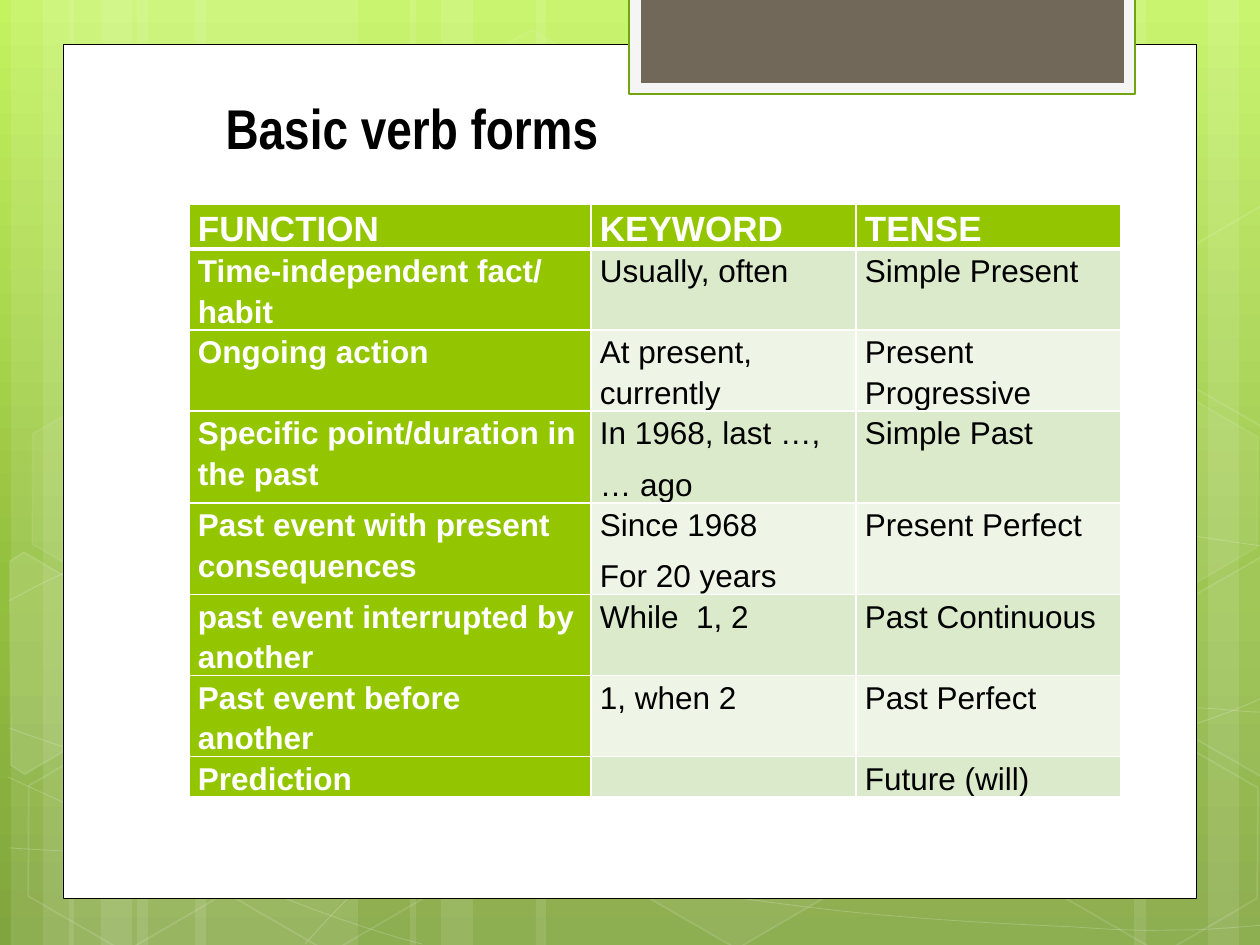
from math import cos, radians, sin

from pptx import Presentation
from pptx.dml.color import RGBColor
from pptx.enum.shapes import MSO_SHAPE as Shape
from pptx.enum.text import MSO_ANCHOR as Anchor, MSO_AUTO_SIZE as AutoSize, PP_ALIGN as Align
from pptx.oxml import parse_xml
from pptx.oxml.ns import nsdecls, qn
from pptx.util import Pt

# ---- Content ----
TITLE = "Basic verb forms"
VERB_FORMS = [
    ("FUNCTION", "KEYWORD", "TENSE"),
    ("Time-independent fact/ habit", "Usually, often", "Simple Present"),
    ("Ongoing action", "At present, currently", "Present Progressive"),
    ("Specific point/duration in the past", "In 1968, last …,\n… ago", "Simple Past"),
    ("Past event with present consequences", "Since 1968\nFor 20 years", "Present Perfect"),
    ("past event interrupted by another", "While  1, 2", "Past Continuous"),
    ("Past event before another", "1, when 2", "Past Perfect"),
    ("Prediction", "", "Future (will)"),
]
COLUMN_WIDTHS = (402, 265, 265)
TABLE_HEIGHT = 635

# ---- Design, lengths in px ----
PX = 914400 / 126
WIDTH, HEIGHT = 1260, 945
WHITE, BLACK, GREEN = "FFFFFF", "000000", "94C600"
BANDS = ("DCEACC", "EEF5E7")
SKY = [(0, "C3F35F"), (62, "93BF3F"), (100, "81A53E")]

# left, width, rotation
STRIPES = [
    (137, 221, 0), (11, 63, 0), (43, 105, 0), (195, 221, 0), (69, 63, 0), (101, 105, 0),
    (925, 221, 180), (1208, 63, 180), (1134, 105, 180),
    (536, 389, 0), (410, 63, 0), (441, 105, 0),
]
# start point, then Bézier segments of two controls and an end
WAVES = [
    [(9, 848), (77, 852), (145, 856), (239, 854), (334, 853), (451, 851), (577, 838),
     (703, 825), (882, 801), (998, 777), (1113, 753), (1231, 716), (1269, 694)],
    [(9, 601), (45, 581), (82, 562), (152, 543), (224, 524), (326, 496), (437, 488),
     (549, 479), (685, 478), (824, 488), (963, 498), (1193, 537), (1269, 547)],
    [(8, 777), (160, 847), (311, 916), (422, 944)],
    [(9, 728), (48, 742), (88, 756), (161, 776), (234, 795), (344, 827), (450, 848),
     (554, 869), (687, 892), (791, 905), (896, 919), (1008, 924), (1075, 927),
     (1142, 932), (1158, 930), (1191, 930), (1223, 929), (1246, 926), (1269, 925)],
    [(305, 944), (328, 919), (350, 893), (381, 871), (411, 847), (454, 823), (489, 805),
     (524, 788), (546, 780), (591, 767), (638, 755), (722, 737), (766, 728),
     (811, 719), (818, 719), (857, 717), (896, 713), (958, 709), (1000, 708),
     (1045, 707), (1116, 708), (1116, 708), (1116, 708), (1201, 708), (1201, 708),
     (1223, 709), (1245, 712), (1256, 712), (1267, 713), (1264, 712), (1268, 713)],
]
# left, top, fill opacity, line opacity
HEXAGONS = [
    (421, 45, 4, 8), (626, 742, 6, 12), (14, 745, 0, 12), (18, 393, 7, 8), (219, 746, 0, 12),
    (949, 571, 10, 12), (1051, 747, 0, 12), (1051, 396, 7, 8),
]
# centre, corners as they stand on the slide, fill opacity
CUT_HEXAGONS = [
    ((45, 675), [(10, 561), (24, 552), (121, 609), (120, 718), (25, 774), (11, 765)], 10),
    ((1241, 655), [(1167, 611), (1263, 556), (1271, 562), (1271, 772), (1263, 777), (1167, 722)], 4),
    ((1241, 304), [(1167, 261), (1263, 205), (1273, 212), (1271, 422), (1263, 427), (1167, 372)], 0),
]
TILT = 30
# left, top, width, height, fill, line, line width
PANELS = [
    (63, 45, 1134, 854, WHITE, BLACK, 0.5),
    (629, -3, 506, 97, "F5F5F5", "74A510", 1.25),
    (641, -2, 483, 85, "71685A", None, 0),
]


def emu(*lengths):
    return [round(length * PX) for length in lengths]


def color(hex_string):
    return RGBColor.from_string(hex_string)


def fade(parent, opacity):
    rgb = parent.find(qn("a:solidFill"))[0]
    rgb.append(parse_xml(f'<a:alpha {nsdecls("a")} val="{opacity * 1000}"/>'))


def paint(shape, fill=None, fill_opacity=100, line=None, line_width=0, line_opacity=100):
    shape.shadow.inherit = False
    properties = shape.element.spPr
    if fill and fill_opacity:
        shape.fill.solid()
        shape.fill.fore_color.rgb = color(fill)
        if fill_opacity < 100:
            fade(properties, fill_opacity)
    else:
        shape.fill.background()
    if line:
        shape.line.color.rgb = color(line)
        shape.line.width = Pt(line_width)
        if line_opacity < 100:
            fade(properties.find(qn("a:ln")), line_opacity)
    else:
        shape.line.fill.background()


def outline(shapes, points, close):
    corners = [emu(*point) for point in points]
    builder = shapes.build_freeform(*corners[0], scale=1.0)
    builder.add_line_segments(corners[1:], close=close)
    return builder.convert_to_shape()


def bend(wave):
    """Turn every three straight segments into one Bézier segment."""
    track = wave.element.find(".//" + qn("a:path"))
    straights = track.findall(qn("a:lnTo"))
    for first in range(0, len(straights), 3):
        curve = parse_xml(f'<a:cubicBezTo {nsdecls("a")}/>')
        for straight in straights[first:first + 3]:
            curve.append(straight[0])
            track.remove(straight)
        track.append(curve)


def untilt(point, centre):
    dx, dy = point[0] - centre[0], point[1] - centre[1]
    c, s = cos(radians(TILT)), sin(radians(TILT))
    return centre[0] + dx * c + dy * s, centre[1] - dx * s + dy * c


def add_backdrop(slide):
    background = slide.background.fill
    background.gradient()
    background.gradient_angle = 270
    stops = slide.element.find(".//" + qn("a:gsLst"))
    stops[:] = [
        parse_xml(f'<a:gs {nsdecls("a")} pos="{at * 1000}"><a:srgbClr val="{rgb}"/></a:gs>')
        for at, rgb in SKY
    ]
    pattern = slide.shapes.add_group_shape().shapes
    for left, width, rotation in STRIPES:
        stripe = pattern.add_shape(Shape.RECTANGLE, *emu(left, 0, width, HEIGHT))
        stripe.rotation = rotation
        paint(stripe, WHITE, 10)
    for points in WAVES:
        wave = outline(pattern, points, False)
        bend(wave)
        paint(wave, line=WHITE, line_width=0.5, line_opacity=20)
    for left, top, fill_opacity, line_opacity in HEXAGONS:
        hexagon = pattern.add_shape(Shape.HEXAGON, *emu(left, top, 221, 192))
        hexagon.adjustments[0] = 0.285
        hexagon.rotation = TILT
        paint(hexagon, WHITE, fill_opacity, WHITE, 1, line_opacity)
    for centre, corners, fill_opacity in CUT_HEXAGONS:
        cut = outline(pattern, [untilt(corner, centre) for corner in corners], True)
        cut.rotation = TILT
        paint(cut, WHITE, fill_opacity, WHITE, 1, 12)
    for *box, fill, line, line_width in PANELS:
        panel = slide.shapes.add_shape(Shape.RECTANGLE, *emu(*box))
        paint(panel, fill, line=line, line_width=line_width)


def add_borders(cell, row):
    top, bottom = (3 if row == 1 else 1), (3 if row == 0 else 1)
    for place, (side, width) in enumerate(zip("LRTB", (1, 1, top, bottom))):
        cell._tc.get_or_add_tcPr().insert(place, parse_xml(
            f'<a:ln{side} {nsdecls("a")} w="{Pt(width)}"><a:solidFill>'
            f'<a:srgbClr val="{WHITE}"/></a:solidFill></a:ln{side}>'))


def add_verb_table(slide):
    box = emu(189, 204, sum(COLUMN_WIDTHS), TABLE_HEIGHT)
    table = slide.shapes.add_table(len(VERB_FORMS), len(COLUMN_WIDTHS), *box).table
    for column, width in zip(table.columns, emu(*COLUMN_WIDTHS)):
        column.width = width
    for r, texts in enumerate(VERB_FORMS):
        table.rows[r].height = 0  # each row grows to fit its text
        for c, text in enumerate(texts):
            cell = table.cell(r, c)
            heading = r == 0 or c == 0
            cell.text = text
            cell.margin_left, cell.margin_right = emu(9, 9)
            cell.margin_top = cell.margin_bottom = 0
            cell.fill.solid()
            cell.fill.fore_color.rgb = color(GREEN if heading else BANDS[(r - 1) % 2])
            add_borders(cell, r)
            for paragraph in cell.text_frame.paragraphs:
                paragraph.line_spacing = 1.15
                paragraph.space_before = Pt(6)
                for run in paragraph.runs:
                    style(run.font, "Arial", 20 if r == 0 else 18,
                          WHITE if heading else BLACK, heading)


def style(font, name, size, rgb, bold):
    font.name, font.size, font.bold = name, Pt(size), bold
    font.color.rgb = color(rgb)


def add_title(slide):
    title = slide.shapes.title
    title.left, title.top, title.width, title.height = emu(213, 87, 883, 81)
    frame = title.text_frame
    frame.text = TITLE
    frame.word_wrap = True
    frame.auto_size = AutoSize.SHAPE_TO_FIT_TEXT
    frame.vertical_anchor = Anchor.MIDDLE
    frame.paragraphs[0].alignment = Align.LEFT
    style(frame.paragraphs[0].runs[0].font, "Arial Narrow", 32, BLACK, True)
    slide.shapes.element.append(title.element)  # in front of the panels


def main():
    deck = Presentation()
    deck.slide_width, deck.slide_height = emu(WIDTH, HEIGHT)
    slide = deck.slides.add_slide(deck.slide_layouts[5])
    add_backdrop(slide)
    add_verb_table(slide)
    add_title(slide)
    deck.save("out.pptx")


if __name__ == "__main__":
    main()
